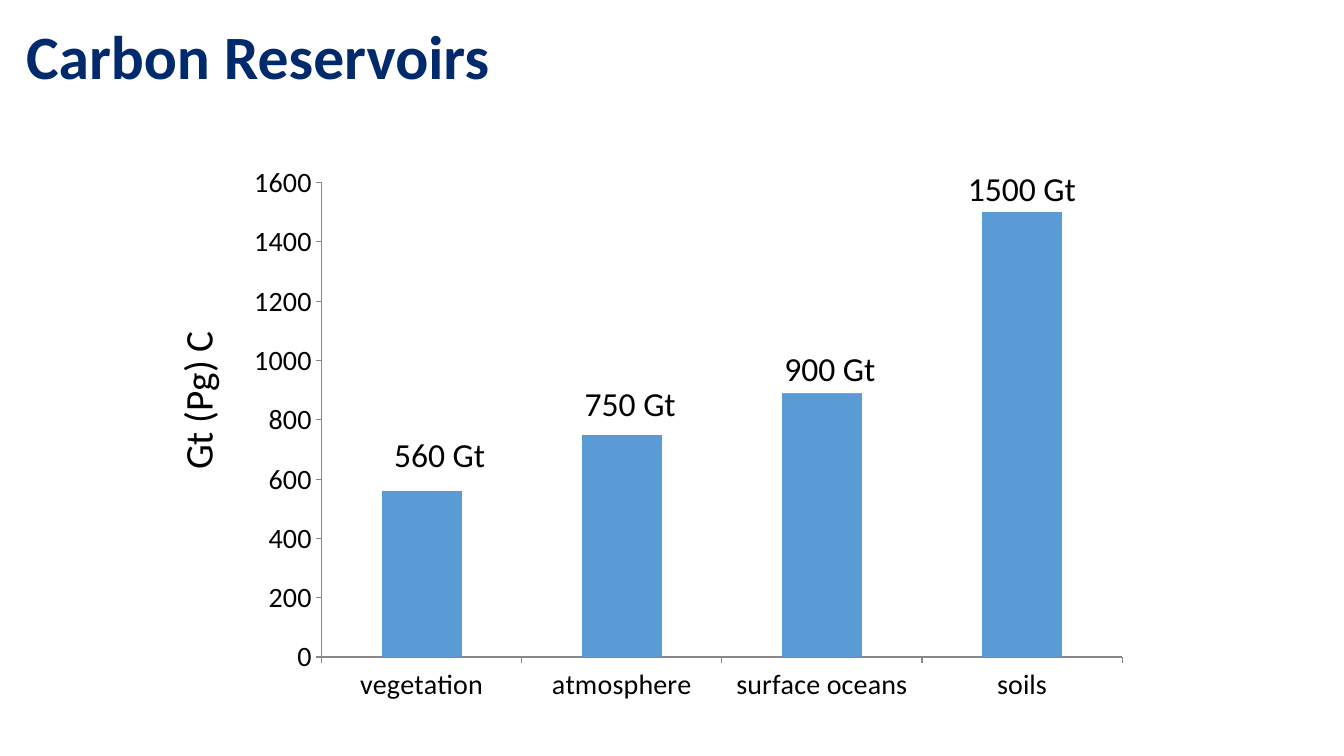
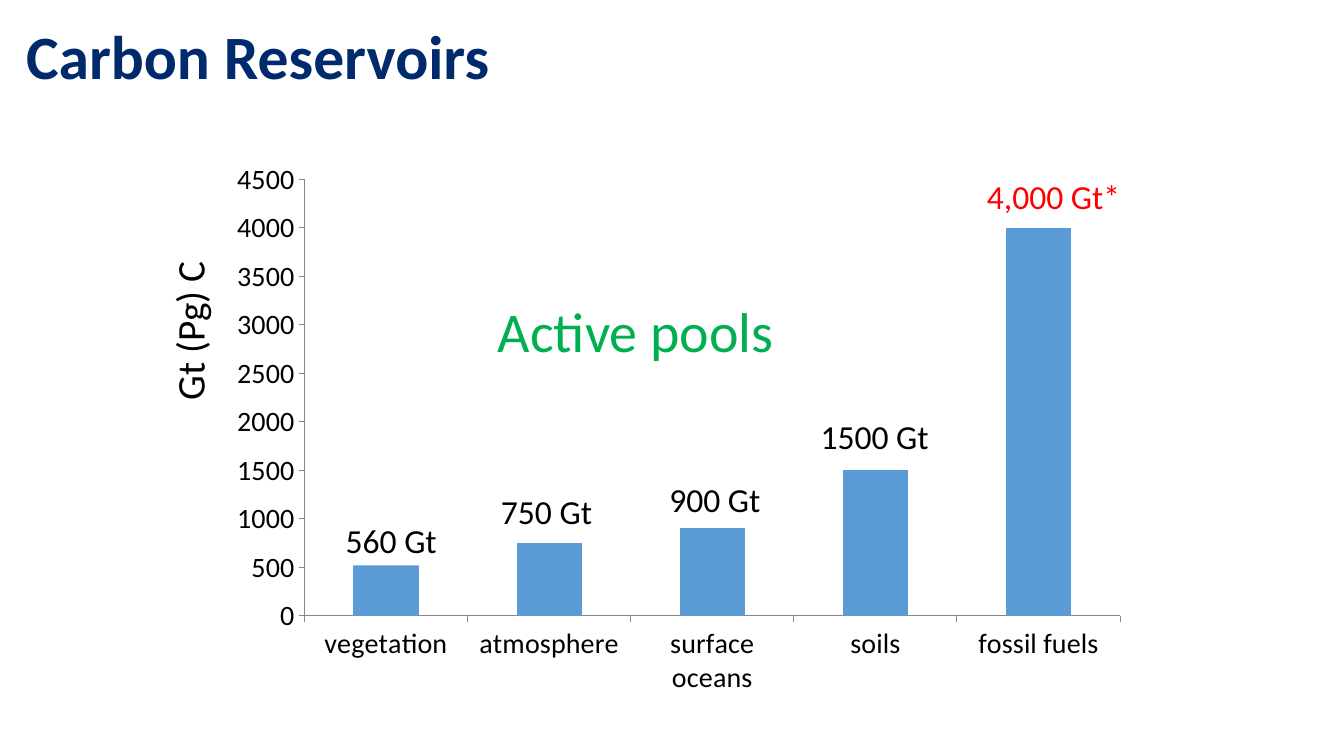
from lxml import etree
from pptx import Presentation
from pptx.chart.data import CategoryChartData
from pptx.dml.color import RGBColor
from pptx.enum.chart import XL_CHART_TYPE, XL_TICK_MARK
from pptx.enum.text import MSO_ANCHOR, PP_ALIGN
from pptx.oxml.ns import qn
from pptx.util import Emu, Pt

COLUMNS = XL_CHART_TYPE.COLUMN_CLUSTERED
TICK_OUT, TICK_NONE = XL_TICK_MARK.OUTSIDE, XL_TICK_MARK.NONE
MIDDLE, TOP = MSO_ANCHOR.MIDDLE, MSO_ANCHOR.TOP
LEFT = PP_ALIGN.LEFT

COLORS = {
    "title": "002A6C", "text": "000000", "paper": "FFFFFF", "bar": "5B9BD5",
    "axis": "878787", "fossil": "FF0000", "active": "00B050",
}
FONT = "Calibri"
SLIDE_W, SLIDE_H = 1333, 750
TITLE_BOX = (16, 0, 1299, 118)
UNIT_SIZE = (159, 57)
LABEL_SIZE = (111, 50)
WIDE_LABEL_SIZE = (165, 50)


def px(length):
    """100 px to the inch."""
    return Emu(length * 9144)


def rgb(name):
    return RGBColor.from_string(COLORS[name])


def add_text(slide, box, text, size, color="text", fill=None, wrap=False,
             bold=False, anchor=TOP, line_spacing=None, rotation=0):
    holder = slide.shapes.add_textbox(*map(px, box))
    holder.rotation = rotation
    if fill:
        holder.fill.solid()
        holder.fill.fore_color.rgb = rgb(fill)
    frame = holder.text_frame
    frame.word_wrap = wrap
    frame.vertical_anchor = anchor
    line = frame.paragraphs[0]
    line.text = text
    line.alignment = LEFT
    if line_spacing:
        line.line_spacing = line_spacing
    line.font.name, line.font.size, line.font.bold = FONT, Pt(size), bold
    line.font.color.rgb = rgb(color)


def add_title(slide, text):
    add_text(slide, TITLE_BOX, text, 44, "title", wrap=True, bold=True,
             anchor=MIDDLE, line_spacing=0.9)


def set_plot_box(chart, box, plot):
    """Fix the inner plot area; plot is given relative to the chart box."""
    area = chart._chartSpace.find(".//" + qn("c:plotArea"))
    for old in area.findall(qn("c:layout")):
        area.remove(old)
    layout = etree.Element(qn("c:layout"))
    manual = etree.SubElement(layout, qn("c:manualLayout"))
    x, y, w, h = plot
    settings = {
        "layoutTarget": "inner", "xMode": "edge", "yMode": "edge",
        "x": x / box[2], "y": y / box[3], "w": w / box[2], "h": h / box[3],
    }
    for tag, value in settings.items():
        etree.SubElement(manual, qn("c:" + tag)).set("val", str(value))
    area.insert(0, layout)


def add_reservoir_chart(slide, box, plot, reservoirs, top, step):
    data = CategoryChartData()
    data.categories = list(reservoirs)
    data.add_series("Series 1", list(reservoirs.values()))
    chart = slide.shapes.add_chart(COLUMNS, *map(px, box), data).chart
    chart.has_legend = chart.has_title = False
    chart.font.name, chart.font.size = FONT, Pt(20)
    chart.font.color.rgb = rgb("text")
    set_plot_box(chart, box, plot)

    # Bars
    bars = chart.plots[0]
    bars.gap_width = 150
    bars.vary_by_categories = False
    fill = bars.series[0].format.fill
    fill.solid()
    fill.fore_color.rgb = rgb("bar")

    # Axes
    scale = chart.value_axis
    scale.minimum_scale, scale.maximum_scale, scale.major_unit = 0, top, step
    for axis in (scale, chart.category_axis):
        axis.has_major_gridlines = False
        axis.major_tick_mark, axis.minor_tick_mark = TICK_OUT, TICK_NONE
        axis.format.line.color.rgb = rgb("axis")
        axis.format.line.width = Pt(0.75)


def add_reservoir_slide(deck, box, plot, reservoirs, top, step, unit_at,
                        labels, wide_label):
    """Chart, unit, title and amounts; places are relative to the chart box."""
    slide = deck.slides.add_slide(deck.slide_layouts[6])
    left, upper = box[:2]

    def place(at, size):
        return (left + at[0], upper + at[1], *size)

    add_reservoir_chart(slide, box, plot, reservoirs, top, step)
    add_text(slide, place(unit_at, UNIT_SIZE), "Gt (Pg) C", 28, rotation=270)
    add_title(slide, "Carbon Reservoirs")
    for amount, at in labels.items():
        add_text(slide, place(at, LABEL_SIZE), amount, 24, fill="paper")
    add_text(slide, place(wide_label, WIDE_LABEL_SIZE), "1500 Gt", 24, wrap=True)
    return slide


def main():
    deck = Presentation()
    deck.slide_width, deck.slide_height = px(SLIDE_W), px(SLIDE_H)
    active = {"vegetation": 560, "atmosphere": 750, "surface oceans": 900,
              "soils": 1500}

    # Active reservoirs
    add_reservoir_slide(
        deck, (249, 164, 865, 532), (70, 17, 794, 471), active, 1600, 200,
        unit_at=(-133, 204),
        labels={"560 Gt": (132, 262), "750 Gt": (321, 211),
                "900 Gt": (519, 176)},
        wide_label=(701, -2))

    # Active reservoirs beside fossil fuels
    fossil = add_reservoir_slide(
        deck, (217, 149, 913, 551), (85, 29, 809, 433),
        {**active, "fossil fuels": 4000}, 4500, 500,
        unit_at=(-109, 150),
        labels={"560 Gt": (116, 362), "750 Gt": (270, 333),
                "900 Gt": (437, 321)},
        wide_label=(587, 259))
    add_text(fossil, (969, 170, 153, 50), "4,000 Gt*", 24, "fossil")
    add_text(fossil, (484, 289, 297, 77), "Active pools", 40, "active",
             fill="paper")

    deck.save("out.pptx")


if __name__ == "__main__":
    main()
